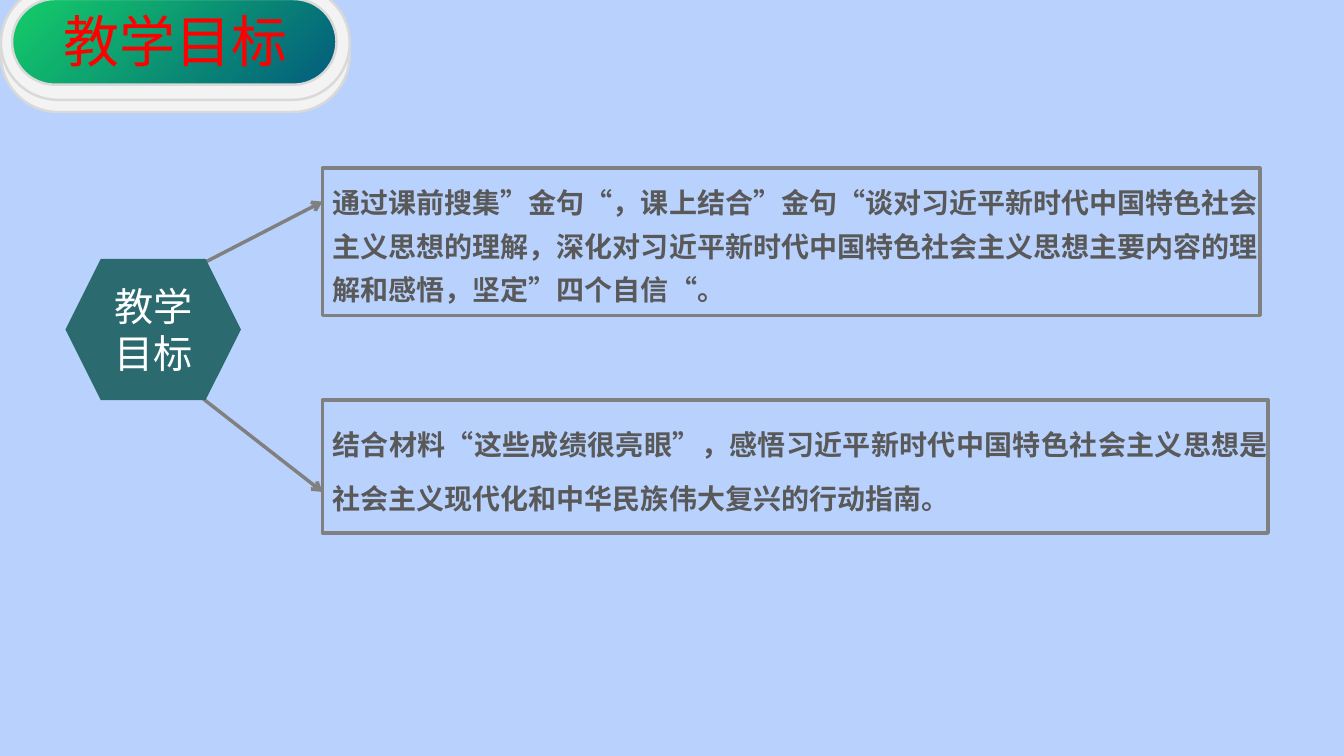
"""Build the teaching goals slide: a title pill and a hexagon leading to two goals."""
from lxml.etree import SubElement
from pptx import Presentation
from pptx.dml.color import RGBColor
from pptx.enum.shapes import MSO_CONNECTOR, MSO_SHAPE
from pptx.enum.text import MSO_ANCHOR, MSO_AUTO_SIZE, PP_ALIGN
from pptx.oxml.ns import qn
from pptx.util import Pt

FONT = "Noto Sans CJK SC"
GREY = "808080"


def rgb(value):
    return RGBColor.from_string(value)


def write(sp, text, size, color, align, bold=False, spacing=1.0):
    tf = sp.text_frame
    tf.word_wrap = True
    tf.text = text
    p = tf.paragraphs[0]
    p.alignment = align
    p.line_spacing = spacing
    r = p.runs[0]
    r.font.name = FONT
    r.font.size = Pt(size)
    r.font.bold = bold
    r.font.color.rgb = rgb(color)
    SubElement(r.font._element, qn("a:ea"), typeface=FONT)


prs = Presentation()
prs.slide_width = Pt(960)
prs.slide_height = Pt(540)
s = prs.slides.add_slide(prs.slide_layouts[6])
s.background.fill.solid()
s.background.fill.fore_color.rgb = rgb("B9D2FD")

arrows = [(144, 188.6, 230.4, 144), (145.4, 285.1, 230.4, 351.4)]
for ends in arrows:
    line = s.shapes.add_connector(MSO_CONNECTOR.STRAIGHT, *[Pt(v) for v in ends])
    line.line.color.rgb = rgb(GREY)
    line.line.width = Pt(2.5)
    SubElement(line.line._get_or_add_ln(), qn("a:tailEnd"), type="arrow")
    SubElement(line._element.spPr, qn("a:effectLst"))

goals = [
    ("通过课前搜集”金句“，课上结合”金句“谈对习近平新时代中国特色社会主义思想的理解，"
     "深化对习近平新时代中国特色社会主义思想主要内容的理解和感悟，坚定”四个自信“。",
     (120.2, 669.6, 105.1), (121.7, 101.5), PP_ALIGN.LEFT, 1.3),
    ("结合材料“这些成绩很亮眼”，感悟习近平新时代中国特色社会主义思想是"
     "社会主义现代化和中华民族伟大复兴的行动指南。",
     (285.8, 675.4, 95), (287.3, 85), PP_ALIGN.JUSTIFY, 1.6),
]
for text, (top, width, height), (text_top, text_height), align, spacing in goals:
    frame = s.shapes.add_shape(MSO_SHAPE.RECTANGLE, Pt(230.4), Pt(top), Pt(width), Pt(height))
    frame.shadow.inherit = False
    frame.fill.background()
    frame.line.color.rgb = rgb(GREY)
    frame.line.width = Pt(2.5)
    box = s.shapes.add_textbox(Pt(230.4), Pt(text_top), Pt(682.6), Pt(text_height))
    write(box, text, 20, "595959", align, True, spacing)
    box.text_frame.auto_size = MSO_AUTO_SIZE.SHAPE_TO_FIT_TEXT

hexagon = s.shapes.add_shape(MSO_SHAPE.HEXAGON, Pt(46.8), Pt(185), Pt(125.3), Pt(100.8))
hexagon.shadow.inherit = False
hexagon.fill.solid()
hexagon.fill.fore_color.rgb = rgb("2B6B6F")
hexagon.line.fill.background()
hexagon.text_frame.vertical_anchor = MSO_ANCHOR.MIDDLE
write(hexagon, "教学目标", 28, "FFFFFF", PP_ALIGN.CENTER)

pills = [
    (0.7, -1.4, 249.1, 81.4, ["F3F3F3"]),
    (0.7, -10.1, 249.1, 81.4, ["F3F3F3"]),
    (8.6, -0.7, 231.8, 61.2, ["14CD68", "035C7D"]),
]
for left, top, width, height, colors in pills:
    pill = s.shapes.add_shape(MSO_SHAPE.ROUNDED_RECTANGLE, Pt(left), Pt(top), Pt(width), Pt(height))
    pill.adjustments[0] = 0.5
    pill.shadow.inherit = False
    pill.line.color.rgb = rgb("D9D9D9")
    pill.line.width = Pt(1.75)
    if len(colors) == 1:
        pill.fill.solid()
        pill.fill.fore_color.rgb = rgb(colors[0])
    else:
        pill.fill.gradient()
        pill.fill.gradient_angle = 315
        for stop, color in zip(pill.fill.gradient_stops, colors):
            stop.color.rgb = rgb(color)

title = s.shapes.add_textbox(Pt(23), Pt(1.4), Pt(204.5), Pt(55.4))
write(title, "教学目标", 40, "FF0000", PP_ALIGN.CENTER)
title.text_frame.auto_size = MSO_AUTO_SIZE.SHAPE_TO_FIT_TEXT

prs.save("out.pptx")
